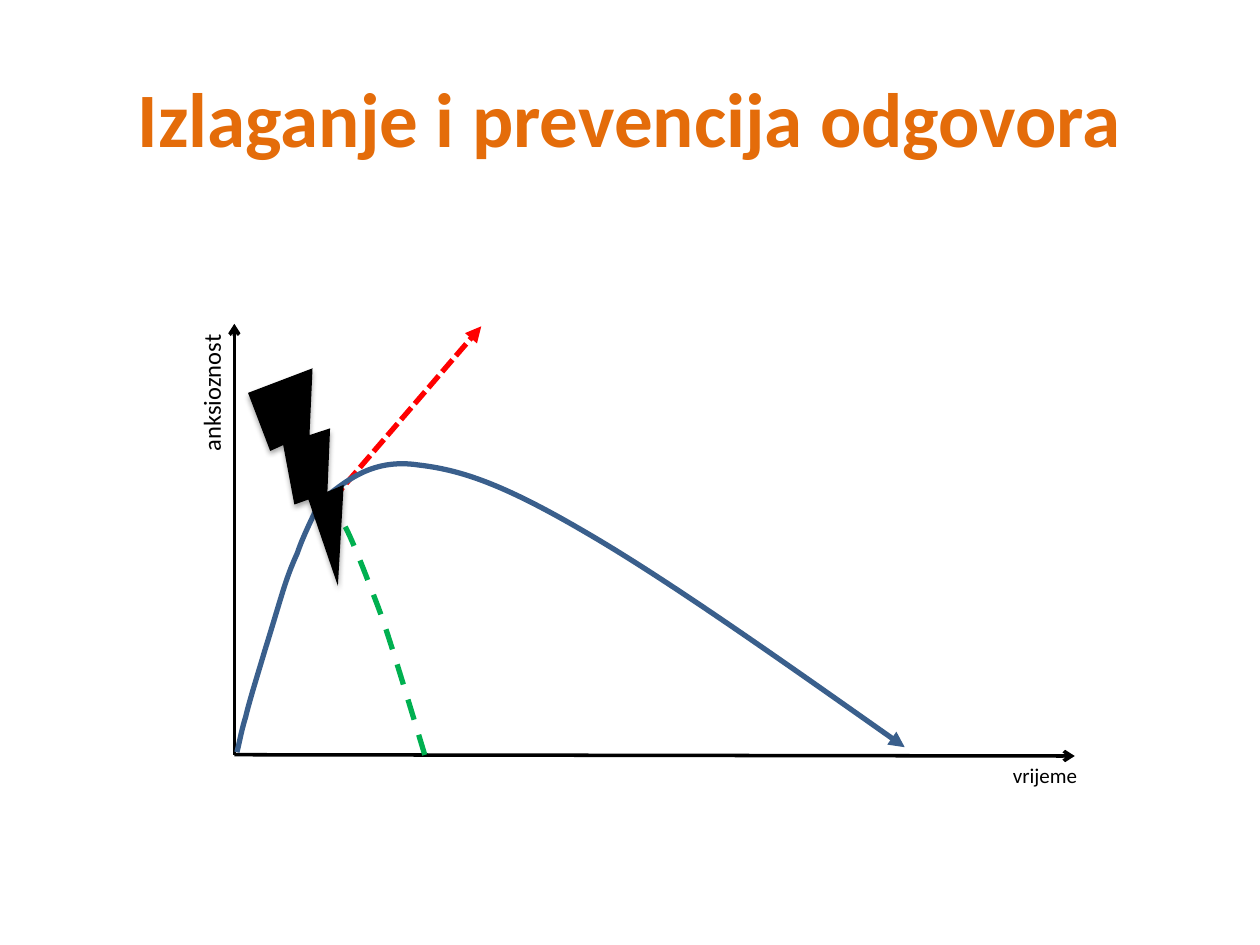
import dataclasses
import typing

import lxml.etree
import pptx
import pptx.dml.color
import pptx.enum.dml
import pptx.enum.shapes
import pptx.enum.text
import pptx.oxml
import pptx.oxml.ns
import pptx.util

Inches = pptx.util.Inches
Point = tuple[float, float]
Dash = pptx.enum.dml.MSO_LINE
UNITS_PER_INCH = 100
COLOURS = {"title": "E46C0A", "ink": "000000", "anxiety": "3A5F8C",
           "relief": "00B050", "rise": "FF0000"}


@dataclasses.dataclass(frozen=True)
class Stroke:
    colour: str
    width: float = 3
    dash: typing.Any = None
    tail: str = ""


@dataclasses.dataclass(frozen=True)
class Straight:
    start: Point
    end: Point
    stroke: Stroke


@dataclasses.dataclass(frozen=True)
class Curve:
    points: tuple[Point, ...]
    stroke: Stroke


@dataclasses.dataclass(frozen=True)
class Label:
    text: str
    box: tuple[float, float, float, float]
    size: float
    rotation: float = 0


AXIS = Stroke("ink", 2, tail="arrow")
ORIGIN = (1.86, 5.99)
AXES = (Straight(ORIGIN, (1.86, 2.57), AXIS), Straight(ORIGIN, (8.53, 6), AXIS))
LABELS = (
    Label("anksioznost", (1.11, 2.94, 1.14, 0.34), 14, 270),
    Label("vrijeme", (7.94, 6, 0.72, 0.3), 12),
)
ONSET = Curve((
    (1.88, 5.97), (1.9, 5.9), (1.91, 5.82), (1.95, 5.69),
    (1.98, 5.56), (2.05, 5.34), (2.1, 5.17),
    (2.15, 5.01), (2.2, 4.84), (2.24, 4.71),
    (2.28, 4.58), (2.31, 4.5), (2.36, 4.39),
    (2.4, 4.27), (2.47, 4.13), (2.53, 4),
), Stroke("anxiety"))
RELIEF = Curve((
    (2.53, 4.09), (2.58, 4.05), (2.63, 4), (2.7, 4.11),
    (2.77, 4.21), (2.89, 4.53), (2.96, 4.71),
    (3.03, 4.89), (3.05, 4.95), (3.12, 5.17),
    (3.19, 5.39), (3.38, 6.02), (3.38, 6.02),
), Stroke("relief", dash=Dash.DASH))
RISE = Straight((2.53, 4.09), (3.82, 2.59),
                Stroke("rise", dash=Dash.SQUARE_DOT, tail="triangle"))
EXPOSURE = Curve((
    (2.59, 3.94), (2.78, 3.79), (2.98, 3.64), (3.32, 3.69),
    (3.66, 3.73), (3.99, 3.84), (4.64, 4.22),
    (5.28, 4.59), (6.23, 5.26), (7.18, 5.93),
), Stroke("anxiety", tail="triangle"))


def colour(name: str) -> pptx.dml.color.RGBColor:
    return pptx.dml.color.RGBColor.from_string(COLOURS[name])


def add_child(parent: typing.Any, tag: str, **values: str) -> typing.Any:
    child = lxml.etree.SubElement(parent, pptx.oxml.ns.qn(tag))
    for name, value in values.items():
        child.set(name, value)
    return child


def format_font(span: typing.Any, colour_name: str, **values: typing.Any) -> None:
    for name, value in values.items():
        setattr(span.font, name, value)
    span.font.color.rgb = colour(colour_name)


def format_line(line: typing.Any, stroke: Stroke) -> None:
    line.color.rgb = colour(stroke.colour)
    line.width = pptx.util.Pt(stroke.width)
    if stroke.dash is not None:
        line.dash_style = stroke.dash
    if stroke.tail:
        add_child(line._get_or_add_ln(), "a:tailEnd", type=stroke.tail)


def add_straight(page: typing.Any, straight: Straight) -> None:
    connector = page.shapes.add_connector(
        pptx.enum.shapes.MSO_CONNECTOR.STRAIGHT,
        *map(Inches, straight.start + straight.end))
    format_line(connector.line, straight.stroke)
    add_child(connector._element.spPr, "a:effectLst")


def add_curve(page: typing.Any, curve: Curve) -> None:
    start, *rest = [(round(x * UNITS_PER_INCH), round(y * UNITS_PER_INCH))
                    for x, y in curve.points]
    builder = page.shapes.build_freeform(*start, scale=Inches(1) / UNITS_PER_INCH)
    builder.add_line_segments(rest, close=False)
    shape = builder.convert_to_shape()
    segments = shape._element.findall(".//" + pptx.oxml.ns.qn("a:lnTo"))
    outline = segments[0].getparent()
    for first in range(0, len(segments), 3):
        bend = add_child(outline, "a:cubicBezTo")
        for segment in segments[first:first + 3]:
            bend.append(segment[0])
            outline.remove(segment)
    shape.fill.background()
    shape.shadow.inherit = False
    format_line(shape.line, curve.stroke)


def add_label(page: typing.Any, label: Label) -> None:
    box = page.shapes.add_textbox(*map(Inches, label.box))
    box.rotation = label.rotation
    box.text_frame.word_wrap = False
    box.text_frame.auto_size = pptx.enum.text.MSO_AUTO_SIZE.SHAPE_TO_FIT_TEXT
    span = box.text_frame.paragraphs[0].add_run()
    span.text = label.text
    format_font(span, "ink", name="Calibri", size=pptx.util.Pt(label.size))


def add_title(page: typing.Any, text: str) -> None:
    title = page.shapes.title
    placement = {"left": 0.5, "top": 0.3, "width": 9, "height": 1.25}
    for name, value in placement.items():
        setattr(title, name, Inches(value))
    title.text_frame.vertical_anchor = pptx.enum.text.MSO_ANCHOR.MIDDLE
    para = title.text_frame.paragraphs[0]
    para.alignment = pptx.enum.text.PP_ALIGN.CENTER
    span = para.add_run()
    span.text = text
    format_font(span, "title", name="Calibri", size=pptx.util.Pt(44), bold=True)


def add_bolt(page: typing.Any) -> None:
    bolt = page.shapes.add_shape(
        pptx.enum.shapes.MSO_SHAPE.LIGHTNING_BOLT,
        *map(Inches, (1.87, 2.94, 1.21, 1.52)))
    bolt.rotation = 309.2
    bolt._element.spPr.xfrm.set("flipH", "1")
    bolt.fill.solid()
    bolt.fill.fore_color.rgb = colour("ink")
    bolt.line.fill.background()
    bolt.shadow.inherit = False
    effects = bolt._element.spPr.find(pptx.oxml.ns.qn("a:effectLst"))
    shadow = add_child(effects, "a:outerShdw", blurRad=str(pptx.util.Pt(3.1)),
                       dist=str(pptx.util.Pt(1.8)), dir="5400000", rotWithShape="0")
    tint = add_child(shadow, "a:srgbClr", val=COLOURS["ink"])
    add_child(tint, "a:alpha", val="35000")


def main() -> None:
    deck = pptx.Presentation()
    deck.slide_width, deck.slide_height = Inches(10), Inches(7.5)
    page = deck.slides.add_slide(deck.slide_layouts[5])
    add_title(page, "Izlaganje i prevencija odgovora")
    for axis in AXES:
        add_straight(page, axis)
    for label in LABELS:
        add_label(page, label)
    for curve in (ONSET, RELIEF):
        add_curve(page, curve)
    add_straight(page, RISE)
    add_curve(page, EXPOSURE)
    add_bolt(page)
    deck.save("out.pptx")


if __name__ == "__main__":
    main()
